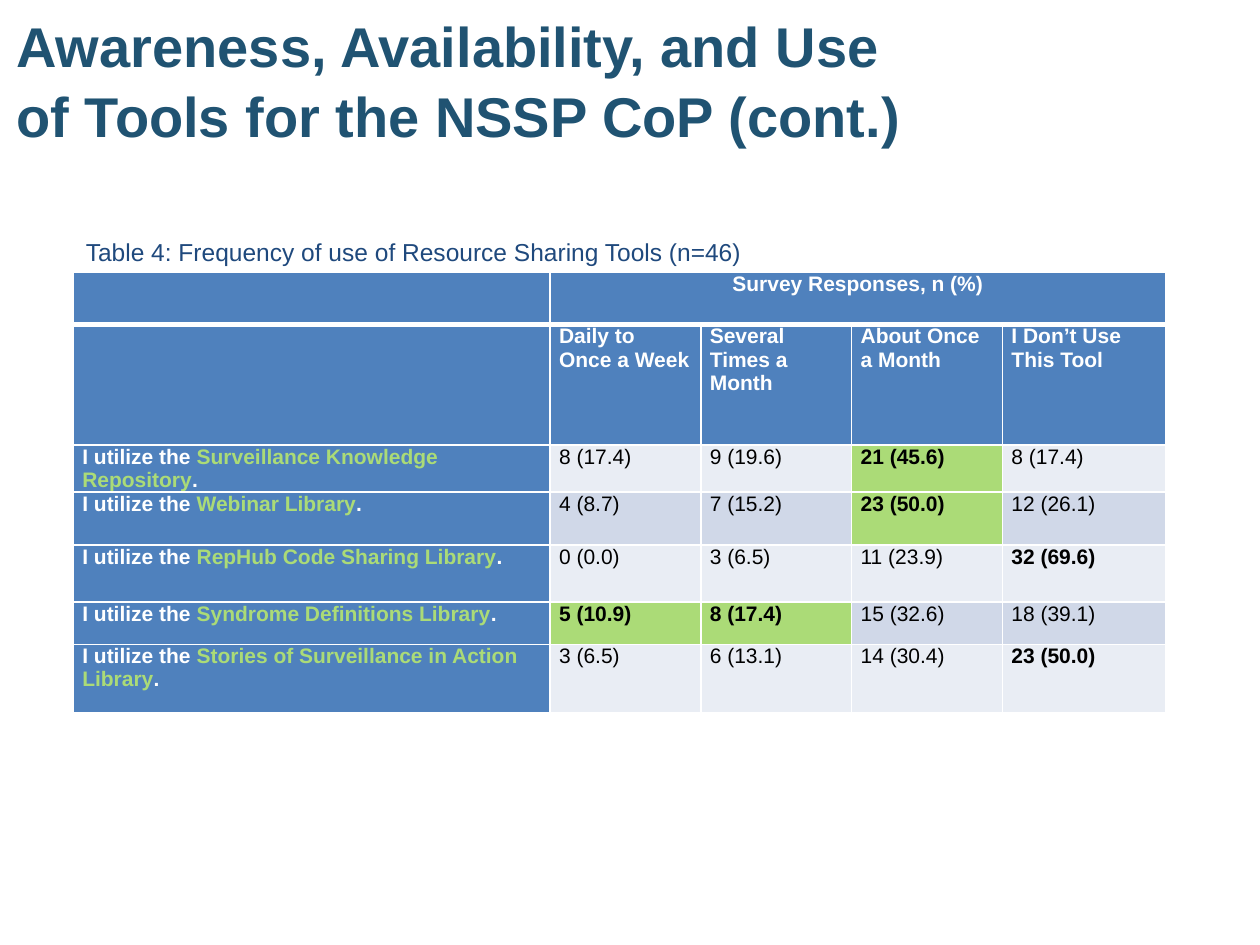
from lxml.etree import SubElement, Element
from pptx import Presentation
from pptx.dml.color import RGBColor
from pptx.enum.text import PP_ALIGN, MSO_ANCHOR
from pptx.oxml.ns import qn
from pptx.util import Cm, Pt

TITLE = "Awareness, Availability, and Use of Tools for the NSSP CoP (cont.)"
NOTE = "Table 4: Frequency of use of Resource Sharing Tools (n=46)"
GROUP = "Survey Responses, n (%)"
HEADS = ["Daily to Once a Week", "Several Times a Month",
         "About Once a Month", "I Don’t Use This Tool"]
TOOLS = [
    ("Surveillance Knowledge Repository", ["8 (17.4)", "9 (19.6)", "21 (45.6)", "8 (17.4)"]),
    ("Webinar Library", ["4 (8.7)", "7 (15.2)", "23 (50.0)", "12 (26.1)"]),
    ("RepHub Code Sharing Library", ["0 (0.0)", "3 (6.5)", "11 (23.9)", "32 (69.6)"]),
    ("Syndrome Definitions Library", ["5 (10.9)", "8 (17.4)", "15 (32.6)", "18 (39.1)"]),
    ("Stories of Surveillance in Action Library", ["3 (6.5)", "6 (13.1)", "14 (30.4)", "23 (50.0)"]),
]
GREEN = {(0, 2), (1, 2), (3, 0), (3, 1)}
BOLD = GREEN | {(2, 3), (4, 3)}
COLS = [9.61, 3.04, 3.04, 3.04, 3.29]
ROWS = [1.05, 2.43, 0.95, 1.07, 1.15, 0.85, 1.38]
BLUE, LIME, WHITE, BLACK = "4F81BD", "ABDB77", "FFFFFF", "000000"
BANDS = ["E9EDF4", "D0D8E8"]
PAD = dict(margin_left=Cm(0.18), margin_right=Cm(0.18), margin_top=0, margin_bottom=0)


def tint(thing, hue):
    thing.rgb = RGBColor.from_string(hue)


def style(thing, form):
    for key, value in form.items():
        setattr(thing, key, value)


def write(para, text, hue, size, bold=False):
    run = para.add_run()
    run.text = text
    style(run.font, dict(name="Arial", size=Pt(size), bold=bold))
    tint(run.font.color, hue)


def edge(cell, row):
    wide = {"lnT": 3 if row == 1 else 1, "lnB": 3 if row == 0 else 1}
    props = cell._tc.get_or_add_tcPr()
    for spot, side in enumerate(["lnL", "lnR", "lnT", "lnB"]):
        line = Element(qn("a:" + side), w=str(Pt(wide.get(side, 1))))
        fill = SubElement(line, qn("a:solidFill"))
        SubElement(fill, qn("a:srgbClr"), val=WHITE)
        props.insert(spot, line)


def fill(cell, row, hue):
    style(cell, PAD)
    cell.fill.solid()
    tint(cell.fill.fore_color, hue)
    edge(cell, row)
    return cell.text_frame.paragraphs[0]


deck = Presentation()
style(deck, dict(slide_width=Cm(25.4), slide_height=Cm(19.05)))
slide = deck.slides.add_slide(deck.slide_layouts[5])

title = slide.shapes.title
style(title, dict(left=Cm(0.08), top=Cm(0), width=Cm(18.49), height=Cm(3.18)))
style(title.text_frame, dict(word_wrap=True, vertical_anchor=MSO_ANCHOR.MIDDLE))
para = title.text_frame.paragraphs[0]
style(para, dict(alignment=PP_ALIGN.LEFT, line_spacing=1.04))
write(para, TITLE, "205372", 32, True)

grid = slide.shapes.add_table(len(ROWS), len(COLS), Cm(1.48), Cm(5.49),
                              Cm(sum(COLS)), Cm(sum(ROWS))).table
for col, size in zip(grid.columns, COLS):
    col.width = Cm(size)
for row, size in zip(grid.rows, ROWS):
    row.height = Cm(size)

for row in range(2):
    for col in range(len(COLS)):
        para = fill(grid.cell(row, col), row, BLUE)
        if row and col:
            write(para, HEADS[col - 1], WHITE, 12, True)
grid.cell(0, 1).merge(grid.cell(0, 4))
para = grid.cell(0, 1).text_frame.paragraphs[0]
para.alignment = PP_ALIGN.CENTER
write(para, GROUP, WHITE, 12, True)

for num, (tool, counts) in enumerate(TOOLS):
    row = num + 2
    para = fill(grid.cell(row, 0), row, BLUE)
    for text, hue in [("I utilize the ", WHITE), (tool, LIME), (".", WHITE)]:
        write(para, text, hue, 12, True)
    for col, count in enumerate(counts):
        hue = LIME if (num, col) in GREEN else BANDS[num % 2]
        para = fill(grid.cell(row, col + 1), row, hue)
        write(para, count, BLACK, 12, (num, col) in BOLD)

note = slide.shapes.add_textbox(Cm(1.48), Cm(4.65), Cm(21.62), Cm(0.86))
note.text_frame.word_wrap = True
write(note.text_frame.paragraphs[0], NOTE, "1F497D", 14)

deck.save("out.pptx")
